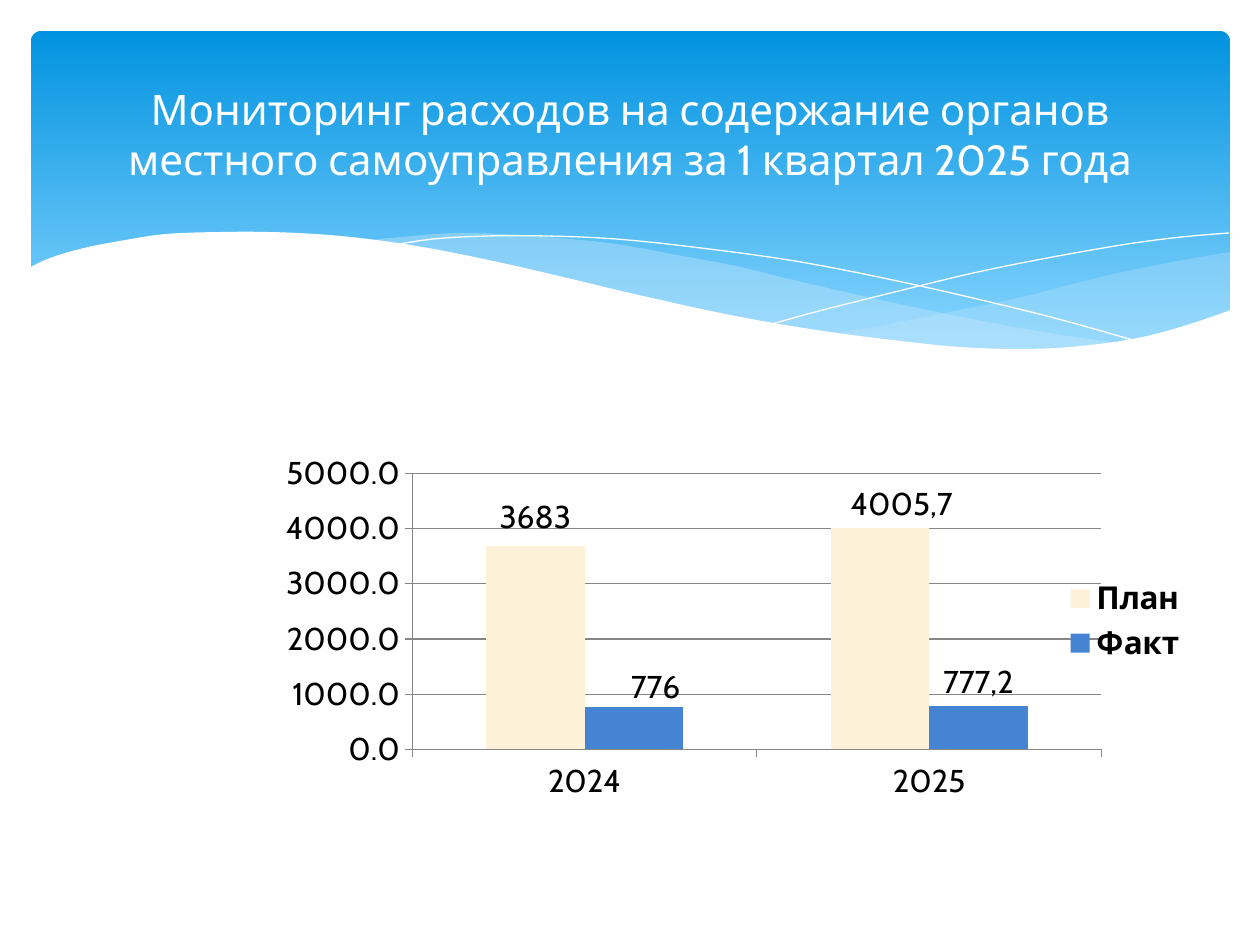
from dataclasses import dataclass
from typing import Optional

from lxml.etree import SubElement
from pptx import Presentation
from pptx.chart.data import CategoryChartData as Data
from pptx.dml.color import RGBColor as Rgb
from pptx.enum.chart import XL_CHART_TYPE as Kind, XL_LABEL_POSITION as Spot
from pptx.enum.chart import XL_LEGEND_POSITION as Side, XL_TICK_MARK as Tick
from pptx.enum.shapes import MSO_SHAPE as Form
from pptx.enum.text import MSO_ANCHOR as Anchor, MSO_AUTO_SIZE as Fit, PP_ALIGN as Align
from pptx.oxml import parse_xml
from pptx.oxml.ns import nsdecls, qn
from pptx.util import Pt

SCALE = 914400 / 126


@dataclass(frozen=True)
class Theme:
    face: str = "Cabin"
    white: str = "FFFFFF"
    black: str = "000000"
    top: str = "0293E0"
    base: str = "83D3FE"
    mist: str = "C6E7FC"
    grid: str = "868686"
    plan: str = "FDF2D9"
    fact: str = "4584D3"
    head: int = 24
    note: int = 18


@dataclass(frozen=True)
class Wave:
    edges: tuple
    fill: Optional[str] = None
    alpha: int = 100
    line: Optional[str] = None


@dataclass(frozen=True)
class Row:
    name: str
    color: str
    vals: tuple
    tags: tuple
    shifts: tuple


LOOK = Theme()

WAVES = (
    Wave((((1230, 252), (1178, 261), (1123, 272), (1085, 281), (1014, 299),
           (949, 312), (890, 324), (833, 334)),
          ((833, 334), (888, 341), (939, 347), (1012, 350), (1076, 348),
           (1130, 340), (1178, 330), (1230, 311))), LOOK.mist, 29),
    Wave((((360, 241), (413, 236), (455, 233), (503, 234), (557, 238), (616, 244),
           (682, 256), (736, 266), (793, 280), (890, 302), (977, 320), (1055, 334),
           (1125, 344)),
          ((1125, 344), (1080, 349), (1017, 350), (942, 348), (857, 338), (757, 321),
           (668, 302), (566, 280), (509, 266), (431, 251), (360, 241))), LOOK.mist, 40),
    Wave((((389, 246), (433, 239), (488, 236), (546, 236), (616, 239), (701, 248),
           (801, 262), (916, 285), (1047, 316), (1143, 343)),), line=LOOK.white),
    Wave((((772, 324), (823, 310), (907, 289), (978, 272), (1053, 257), (1128, 244),
           (1182, 237), (1229, 233)),), line=LOOK.white),
    Wave((((1231, 310), (1184, 326), (1133, 339), (1071, 347), (1019, 349), (959, 347),
           (892, 340), (816, 330), (730, 315), (634, 294), (563, 277), (493, 261),
           (428, 248), (368, 239), (315, 234), (266, 232), (223, 232), (166, 234),
           (120, 241), (84, 248), (50, 258), (29, 268)),
          ((29, 415), (1231, 415))), LOOK.white),
)

ROWS = (
    Row("План", LOOK.plan, (3683, 4005.7), ("3683", "4005,7"), ((0, -0.01), (0.02, 0))),
    Row("Факт", LOOK.fact, (776, 777.2), ("776", "777,2"), ((0.02, 0.01), (0, 0))),
)


def px(num: float) -> int:
    return round(num * SCALE)


def style(font, size: int, color: str, bold: bool = False) -> None:
    font.name, font.size, font.bold = LOOK.face, Pt(size), bold
    font.color.rgb = Rgb.from_string(color)


def write(frame, text: str, *, size: int, color: str, bold: bool = False,
          align=Align.CENTER) -> None:
    part = frame.paragraphs[0]
    part.alignment = align
    run = part.add_run()
    run.text = text
    style(run.font, size, color, bold)


def paint(fill, color: str) -> None:
    fill.solid()
    fill.fore_color.rgb = Rgb.from_string(color)


def curve(dots: tuple, steps: int = 4) -> list:
    if len(dots) < 3:
        return list(dots)
    ends = (dots[0], *dots, dots[-1])
    out = []
    for a, b, c, d in zip(ends, ends[1:], ends[2:], ends[3:]):
        for t in (i / steps for i in range(steps)):
            out.append(tuple(
                (2 * q + (r - p) * t + (2 * p - 5 * q + 4 * r - s) * t ** 2
                 + (3 * q - p - 3 * r + s) * t ** 3) / 2
                for p, q, r, s in zip(a, b, c, d)))
    return out + [dots[-1]]


def draw_wave(shapes, wave: Wave) -> None:
    dots = [dot for edge in wave.edges for dot in curve(edge)]
    pen = shapes.build_freeform(*map(px, dots[0]))
    pen.add_line_segments([(px(x), px(y)) for x, y in dots[1:]], close=bool(wave.fill))
    form = pen.convert_to_shape()
    form.shadow.inherit = False
    if wave.fill:
        paint(form.fill, wave.fill)
        if wave.alpha < 100:
            tone = form.fill._xPr.find(qn("a:solidFill"))[0]
            SubElement(tone, qn("a:alpha"), val=str(wave.alpha * 1000))
    else:
        form.fill.background()
    if wave.line:
        paint(form.line.fill, wave.line)
        form.line.width = 0
    else:
        form.line.fill.background()


def draw_band(shapes) -> None:
    band = shapes.add_shape(Form.ROUNDED_RECTANGLE, *map(px, (31, 31, 1199, 340)))
    band.adjustments[0] = 0.03
    band.shadow.inherit = False
    band.line.fill.background()
    band.fill.gradient()
    band.fill.gradient_angle = 270
    for stop, color, spot in zip(band.fill.gradient_stops, (LOOK.top, LOOK.base), (0, 0.9)):
        stop.color.rgb = Rgb.from_string(color)
        stop.position = spot


def layout(**sides) -> object:
    marks = "".join(f'<c:{key} val="{val}"/>' for key, val in sides.items())
    return parse_xml(f'<c:layout {nsdecls("c")}><c:manualLayout>{marks}'
                     '</c:manualLayout></c:layout>')


def draw_row(plot, index: int, row: Row) -> None:
    bars = plot.series[index]
    paint(bars.format.fill, row.color)
    bars.invert_if_negative = False
    for i, (tag, (dx, dy)) in enumerate(zip(row.tags, row.shifts)):
        label = bars.points[i].data_label
        write(label.text_frame, tag, size=LOOK.note, color=LOOK.black)
        label.position = Spot.OUTSIDE_END
        if dx or dy:
            node = bars.data_labels._element.findall(qn("c:dLbl"))[i]
            old = node.find(qn("c:layout"))
            if old is not None:
                node.remove(old)
            node.insert(1, layout(x=dx, y=dy))
    bars.data_labels.show_value = True


def draw_chart(shapes) -> None:
    data = Data()
    data.categories = ("2024", "2025")
    for row in ROWS:
        data.add_series(row.name, row.vals)
    box = map(px, (106, 383, 1094, 476))
    chart = shapes.add_chart(Kind.COLUMN_CLUSTERED, *box, data).chart
    chart.has_title = False
    style(chart.font, LOOK.note, LOOK.black)
    chart.has_legend = True
    chart.legend.position = Side.RIGHT
    chart.legend.include_in_layout = False
    style(chart.legend.font, LOOK.note, LOOK.black, True)
    plot = chart.plots[0]
    plot.gap_width, plot.overlap, plot.vary_by_categories = 150, 0, False
    for i, row in enumerate(ROWS):
        draw_row(plot, i, row)
    rule = chart.value_axis
    rule.minimum_scale, rule.maximum_scale, rule.major_unit = 0, 5000, 1000
    rule.tick_labels.number_format = "0.0"
    rule.tick_labels.number_format_is_linked = False
    rule.has_major_gridlines = True
    for axis in (rule, chart.category_axis):
        axis.major_tick_mark = Tick.OUTSIDE
        paint(axis.format.line.fill, LOOK.grid)
    paint(rule.major_gridlines.format.line.fill, LOOK.grid)
    area = chart._chartSpace.chart.plotArea
    old = area.find(qn("c:layout"))
    if old is not None:
        area.remove(old)
    area.insert(0, layout(layoutTarget="inner", xMode="edge", yMode="edge",
                          x=0.28, y=0.19, w=0.63, h=0.58))


def draw_title(title) -> None:
    title.left, title.top, title.width, title.height = map(px, (63, 47, 1134, 173))
    frame = title.text_frame
    frame.word_wrap, frame.auto_size = True, Fit.NONE
    frame.vertical_anchor = Anchor.MIDDLE
    write(frame, "Мониторинг расходов на содержание органов местного "
          "самоуправления за 1 квартал 2025 года", size=LOOK.head, color=LOOK.white)
    title.element.getparent().append(title.element)


def main() -> None:
    deck = Presentation()
    deck.slide_width, deck.slide_height = px(1260), px(945)
    slide = deck.slides.add_slide(deck.slide_layouts[5])
    paint(slide.background.fill, LOOK.white)
    draw_band(slide.shapes)
    for wave in WAVES:
        draw_wave(slide.shapes, wave)
    draw_chart(slide.shapes)
    draw_title(slide.shapes.title)
    deck.save("out.pptx")


if __name__ == "__main__":
    main()
